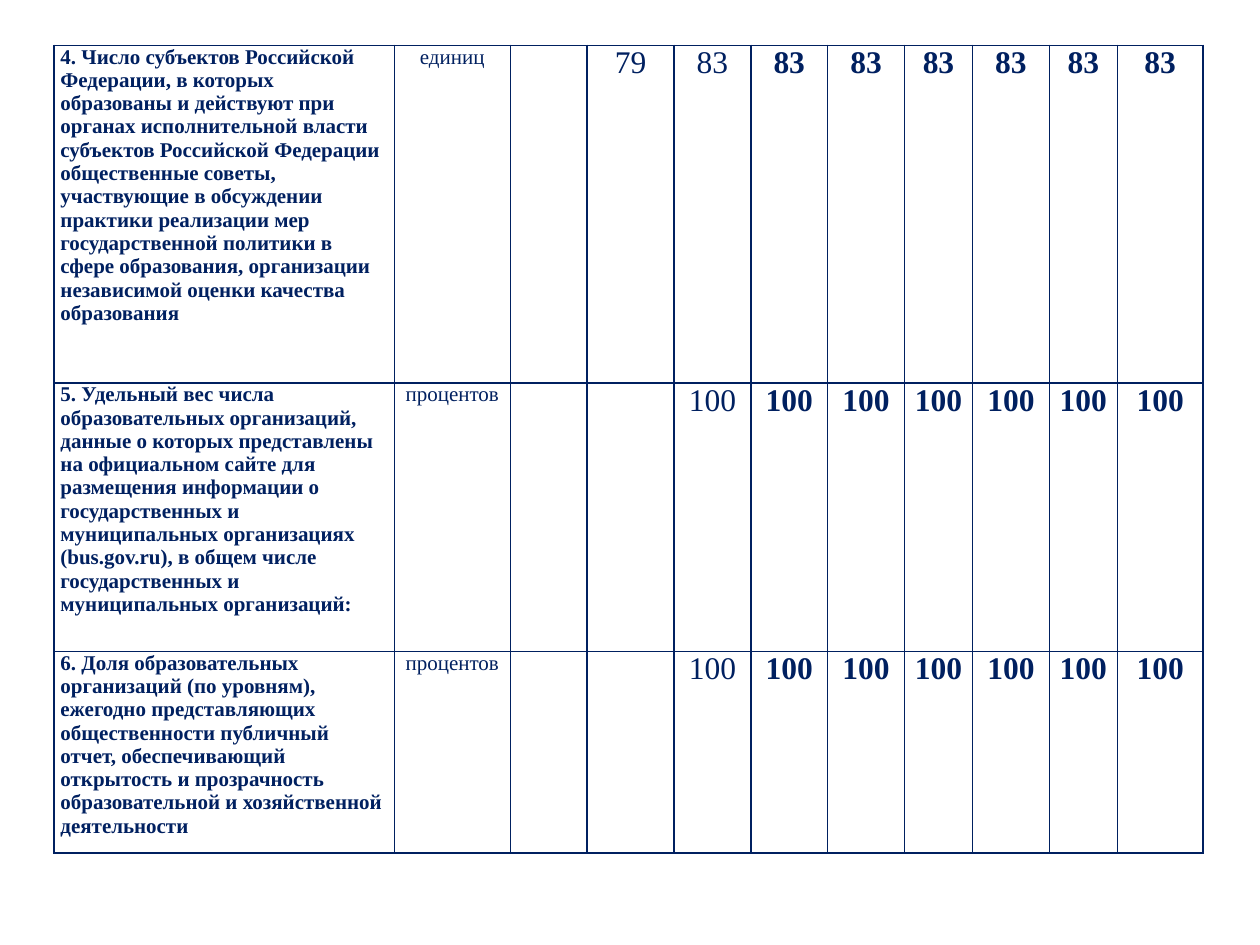
"""Build a slide with a table of education openness indicators."""
from lxml.etree import SubElement
from pptx import Presentation
from pptx.dml.color import RGBColor
from pptx.enum.text import PP_ALIGN
from pptx.oxml.ns import qn
from pptx.util import Inches, Pt

NAVY = "002060"
COLUMN_WIDTHS = [2.7, 0.92, 0.61, 0.69, 0.61, 0.61, 0.61, 0.54, 0.61, 0.54, 0.68]
ROW_HEIGHTS = [2.68, 2.13, 1.6]
INDICATORS = [
    ["4. Число субъектов Российской Федерации, в которых образованы и действуют при "
     "органах исполнительной власти субъектов Российской Федерации общественные советы, "
     "участвующие в обсуждении практики реализации мер государственной политики в сфере "
     "образования, организации независимой оценки качества образования",
     "единиц", "", "79"] + ["83"] * 7,
    ["5. Удельный вес числа образовательных организаций, данные о которых представлены "
     "на официальном сайте для размещения информации о государственных и муниципальных "
     "организациях (bus.gov.ru), в общем числе государственных и муниципальных организаций:",
     "процентов", "", ""] + ["100"] * 7,
    ["6. Доля образовательных организаций (по уровням), ежегодно представляющих "
     "общественности публичный отчет, обеспечивающий открытость и прозрачность "
     "образовательной и хозяйственной деятельности",
     "процентов", "", ""] + ["100"] * 7,
]


def color(value):
    return RGBColor.from_string(value)


def add_borders(cell):
    properties = cell._tc.get_or_add_tcPr()
    for position, side in enumerate(("a:lnL", "a:lnR", "a:lnT", "a:lnB")):
        line = SubElement(properties, qn(side), w=str(Pt(1)))
        properties.remove(line)
        properties.insert(position, line)
        fill = SubElement(line, qn("a:solidFill"))
        SubElement(fill, qn("a:srgbClr"), val=NAVY)


presentation = Presentation()
presentation.slide_width = Inches(10)
presentation.slide_height = Inches(7.5)
slide = presentation.slides.add_slide(presentation.slide_layouts[6])

indicators = slide.shapes.add_table(
    len(ROW_HEIGHTS), len(COLUMN_WIDTHS), Inches(0.43), Inches(0.36),
    Inches(sum(COLUMN_WIDTHS)), Inches(sum(ROW_HEIGHTS))).table
indicators.first_row = False
indicators.horz_banding = False
for column, width in zip(indicators.columns, COLUMN_WIDTHS):
    column.width = Inches(width)
for row, height in zip(indicators.rows, ROW_HEIGHTS):
    row.height = Inches(height)

for row, entries in zip(indicators.rows, INDICATORS):
    for index, (cell, entry) in enumerate(zip(row.cells, entries)):
        cell.fill.background()
        cell.margin_left = cell.margin_right = Inches(0.05)
        cell.margin_top = cell.margin_bottom = 0
        add_borders(cell)
        cell.text_frame.text = entry
        paragraph = cell.text_frame.paragraphs[0]
        paragraph.alignment = PP_ALIGN.LEFT if index == 0 else PP_ALIGN.CENTER
        for run in paragraph.runs:
            run.font.name = "Times New Roman"
            run.font.size = Pt(12 if index < 2 else 18)
            run.font.bold = index == 0 or index > 4
            run.font.color.rgb = color(NAVY)

presentation.save("out.pptx")
